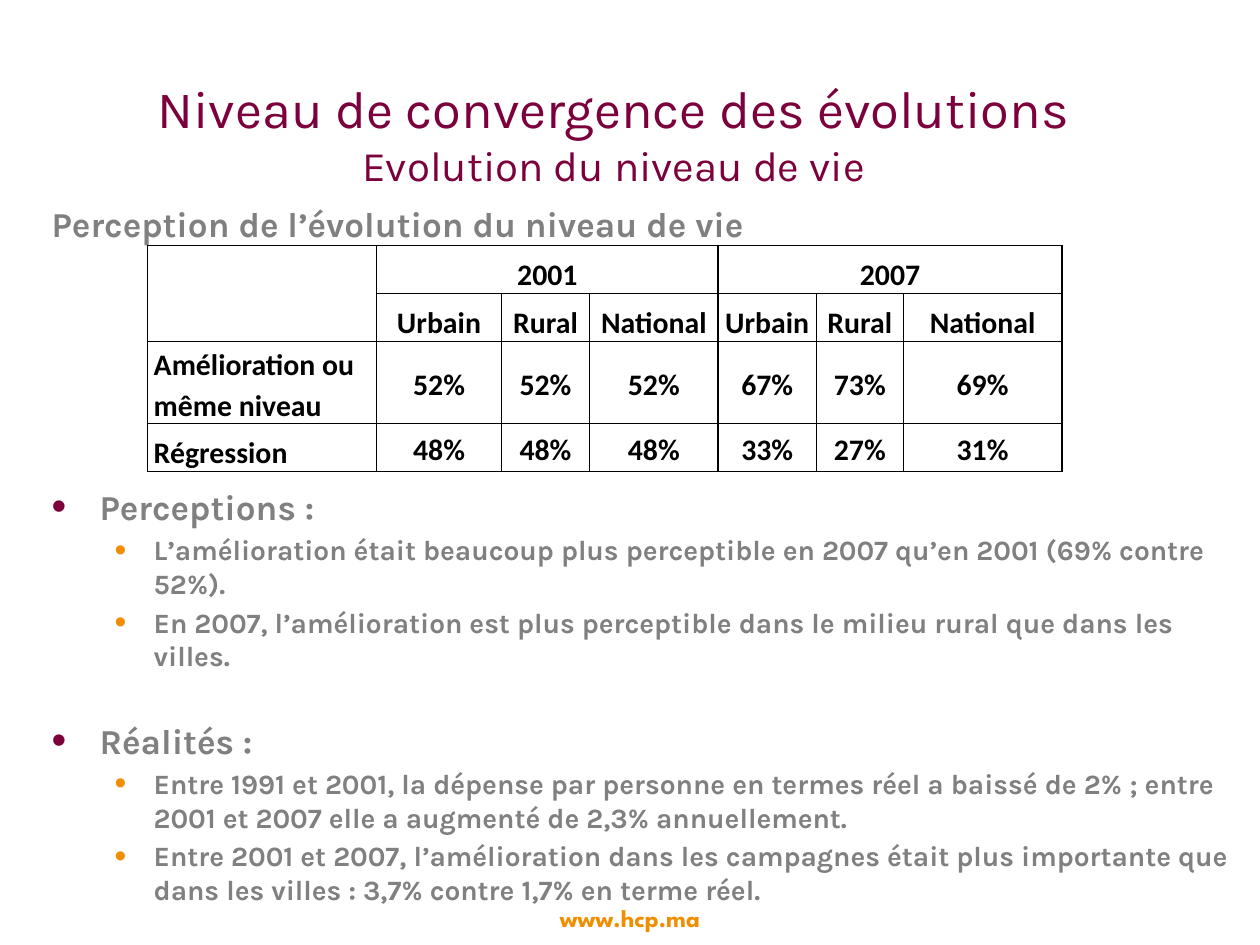
from lxml import etree
from pptx import Presentation
from pptx.dml.color import RGBColor
from pptx.enum.text import MSO_ANCHOR, MSO_AUTO_SIZE, PP_ALIGN
from pptx.oxml.ns import qn
from pptx.util import Inches, Pt

CENTER, LEFT = PP_ALIGN.CENTER, PP_ALIGN.LEFT
MIDDLE, BOTTOM = MSO_ANCHOR.MIDDLE, MSO_ANCHOR.BOTTOM
FIXED_SIZE = MSO_AUTO_SIZE.NONE

PLUM, ORANGE, GRAY, BLACK = "7B003B", "F18E00", "808080", "000000"

TITLE_LINES = [("Niveau de convergence des évolutions", 30),
               ("Evolution du niveau de vie", 24)]
# (text, level, bulleted, space before)
BODY_LINES = [
    ("Perception de l’évolution du niveau de vie", 0, False, 0),
    ("Perceptions :", 0, True, 137.5),
    ("L’amélioration était beaucoup plus perceptible en 2007 qu’en 2001 "
     "(69% contre 52%).", 1, True, 3),
    ("En 2007, l’amélioration est plus perceptible dans le milieu rural que "
     "dans les villes.", 1, True, 3),
    ("Réalités :", 0, True, 26.75),
    ("Entre 1991 et 2001, la dépense par personne en termes réel a baissé de "
     "2% ; entre 2001 et 2007 elle a augmenté de 2,3% annuellement.", 1, True, 3),
    ("Entre 2001 et 2007, l’amélioration dans les campagnes était plus "
     "importante que dans les villes : 3,7% contre 1,7% en terme réel.", 1, True, 3),
]
LEVEL_STYLES = [(20, 0.38, -0.38, PLUM), (16, 0.81, -0.31, ORANGE)]

AREAS = ["Urbain", "Rural", "National"]
SURVEY_ROWS = [
    ["", "2001", "", "", "2007", "", ""],
    [""] + AREAS * 2,
    ["Amélioration ou même niveau", "52%", "52%", "52%", "67%", "73%", "69%"],
    ["Régression", "48%", "48%", "48%", "33%", "27%", "31%"],
]
COLUMN_WIDTHS = [1.82, 0.99, 0.7, 1.02, 0.78, 0.69, 1.26]
ROW_HEIGHTS = [0.38, 0.38, 0.57, 0.38]


def rgb(color):
    """Return the colour for a hex string."""
    return RGBColor.from_string(color)


def format_runs(paragraph, font, size, color, bold=False):
    """Give every run of a paragraph the same font."""
    for run in paragraph.runs:
        run.font.name = font
        run.font.size = Pt(size)
        run.font.bold = bold
        run.font.color.rgb = rgb(color)


def place(shape, left, top, width, height):
    """Move and size a shape, in inches."""
    shape.left, shape.top = Inches(left), Inches(top)
    shape.width, shape.height = Inches(width), Inches(height)


def set_bullet(paragraph, indent, hanging, color, bulleted):
    """Set the indent and the bullet of a paragraph."""
    properties = paragraph._p.get_or_add_pPr()
    properties.set("marL", str(Inches(indent)))
    properties.set("indent", str(Inches(hanging)))
    if not bulleted:
        etree.SubElement(properties, qn("a:buNone"))
        return
    bullet_color = etree.SubElement(properties, qn("a:buClr"))
    etree.SubElement(bullet_color, qn("a:srgbClr"), val=color)
    etree.SubElement(properties, qn("a:buSzPct"), val="120000")
    etree.SubElement(properties, qn("a:buFont"), typeface="Arial")
    etree.SubElement(properties, qn("a:buChar"), char="•")


def fill_title(title):
    """Write the two-line heading."""
    place(title, 0.62, 0.78, 8.5, 0.55)
    frame = title.text_frame
    frame.auto_size = FIXED_SIZE
    frame.vertical_anchor = MIDDLE
    frame.text = "\n".join(text for text, _ in TITLE_LINES)
    for paragraph, (_, size) in zip(frame.paragraphs, TITLE_LINES):
        paragraph.alignment = CENTER
        format_runs(paragraph, "Karla", size, PLUM)


def fill_body(body):
    """Write the table caption and the findings."""
    place(body, 0.31, 1.56, 9.69, 5.47)
    frame = body.text_frame
    frame.auto_size = FIXED_SIZE
    frame.text = "\n".join(line[0] for line in BODY_LINES)
    for paragraph, (_, level, bulleted, gap) in zip(frame.paragraphs, BODY_LINES):
        size, indent, hanging, color = LEVEL_STYLES[level]
        paragraph.level = level
        set_bullet(paragraph, indent, hanging, color, bulleted)
        paragraph.space_before = Pt(gap)
        format_runs(paragraph, "Karla", size, GRAY, bold=True)


def set_borders(cell):
    """Draw a thin black line on all sides of a cell."""
    properties = cell._tc.get_or_add_tcPr()
    for index, side in enumerate(("a:lnL", "a:lnR", "a:lnT", "a:lnB")):
        line = etree.Element(qn(side), w=str(Pt(1)))
        fill = etree.SubElement(line, qn("a:solidFill"))
        etree.SubElement(fill, qn("a:srgbClr"), val=BLACK)
        properties.insert(index, line)


def format_cell(cell, text, alignment, anchor):
    """Write and style one table cell."""
    cell.fill.background()
    set_borders(cell)
    cell.margin_left = cell.margin_right = Inches(0.05)
    cell.margin_top = cell.margin_bottom = 0
    cell.vertical_anchor = anchor
    cell.text_frame.text = text
    paragraph = cell.text_frame.paragraphs[0]
    paragraph.alignment = alignment
    paragraph.line_spacing = 1.15
    format_runs(paragraph, "Calibri", 17, BLACK, bold=True)


def add_survey_table(slide):
    """Add the perception figures by year and area."""
    table = slide.shapes.add_table(
        len(ROW_HEIGHTS), len(COLUMN_WIDTHS), Inches(1.17), Inches(1.95),
        Inches(sum(COLUMN_WIDTHS)), Inches(sum(ROW_HEIGHTS))).table
    table.first_row = table.horz_banding = False
    for column, width in zip(table.columns, COLUMN_WIDTHS):
        column.width = Inches(width)
    for row, height in zip(table.rows, ROW_HEIGHTS):
        row.height = Inches(height)
    for r, texts in enumerate(SURVEY_ROWS):
        for c, text in enumerate(texts):
            low = r < 2 or (r == 3 and c == 0)
            format_cell(table.cell(r, c), text, CENTER if c else LEFT,
                        BOTTOM if low else MIDDLE)
    table.cell(0, 0).merge(table.cell(1, 0))
    for first in (1, 4):
        table.cell(0, first).merge(table.cell(0, first + 2))


def add_web_address(slide):
    """Add the site address at the foot."""
    address = slide.shapes.add_textbox(
        Inches(3.82), Inches(7.12), Inches(2.36), Inches(0.33))
    frame = address.text_frame
    frame.word_wrap = True
    frame.text = "www.hcp.ma"
    frame.paragraphs[0].alignment = CENTER
    format_runs(frame.paragraphs[0], "League Spartan", 14, ORANGE, bold=True)


def main():
    """Build the slide and save it."""
    deck = Presentation()
    deck.slide_width, deck.slide_height = Inches(10), Inches(7.5)
    slide = deck.slides.add_slide(deck.slide_layouts[1])
    add_web_address(slide)
    fill_title(slide.shapes.title)
    fill_body(slide.placeholders[1])
    add_survey_table(slide)
    deck.save("out.pptx")


if __name__ == "__main__":
    main()
